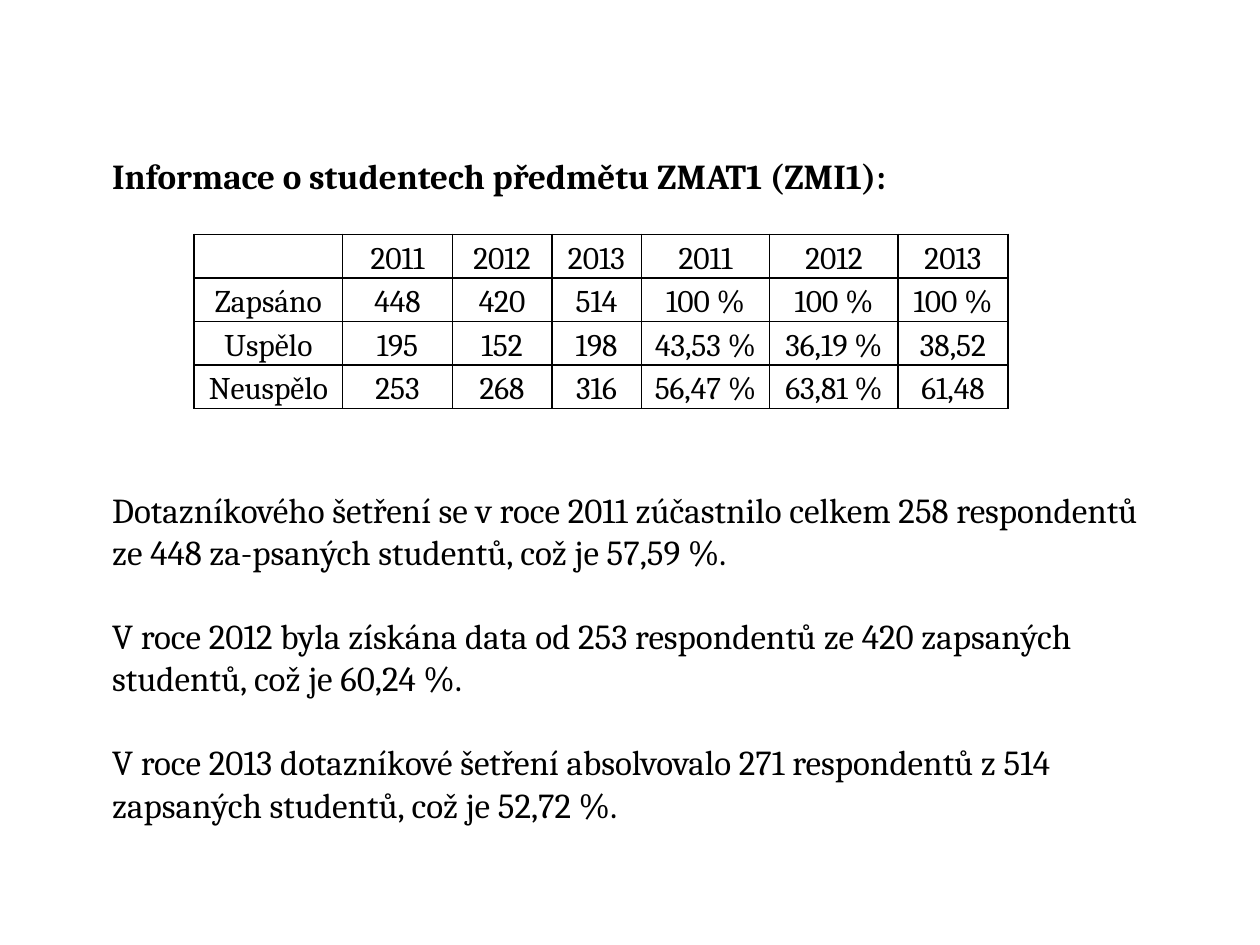
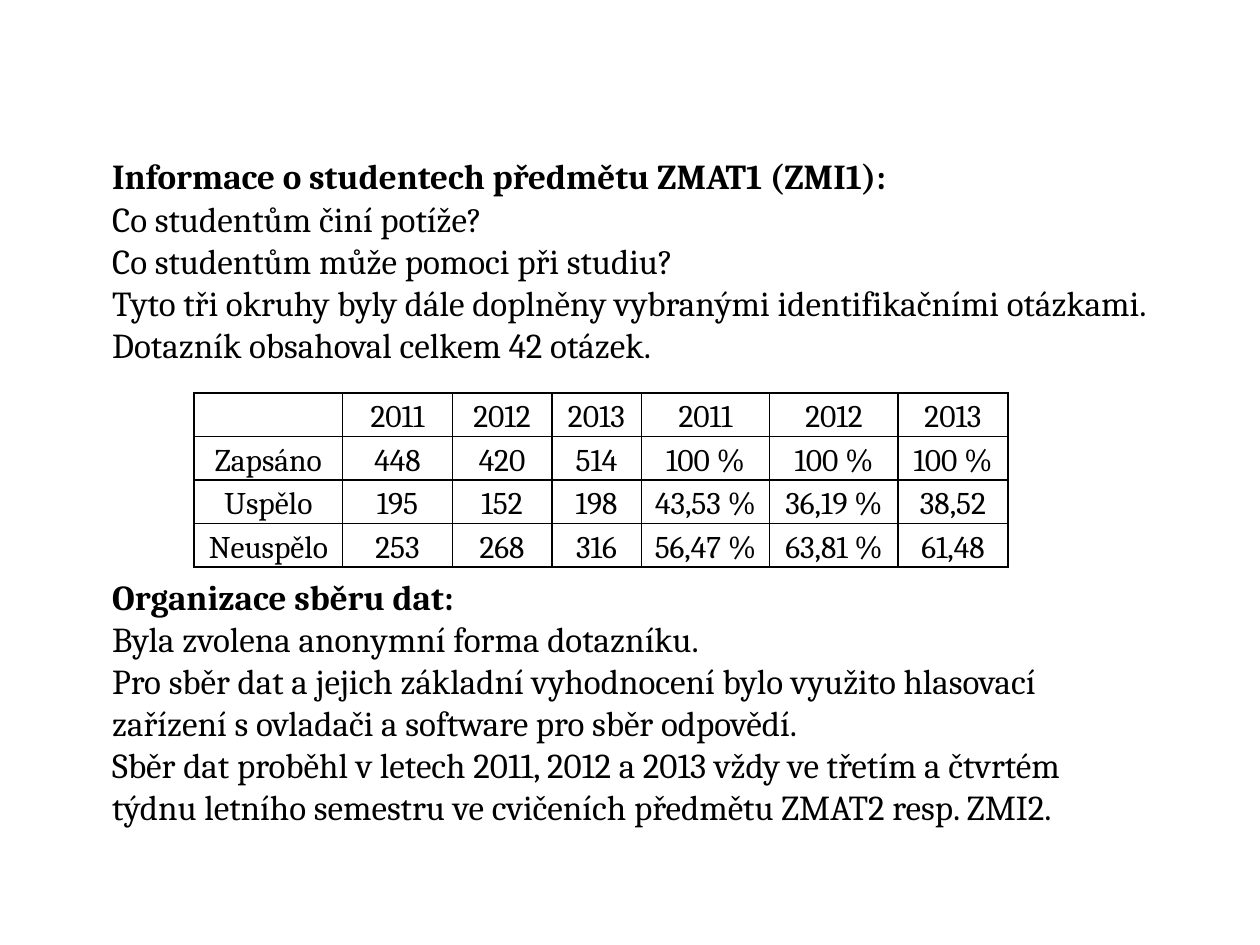
from lxml import etree
from pptx import Presentation
from pptx.dml.color import RGBColor
from pptx.enum.text import MSO_ANCHOR, MSO_AUTO_SIZE, PP_ALIGN
from pptx.oxml.ns import qn
from pptx.util import Inches, Pt

TOP, MIDDLE = MSO_ANCHOR.TOP, MSO_ANCHOR.MIDDLE
LEFT, CENTER = PP_ALIGN.LEFT, PP_ALIGN.CENTER
GROW = MSO_AUTO_SIZE.SHAPE_TO_FIT_TEXT

BLACK = RGBColor(0, 0, 0)
FONT = "Cambria"
TEXT_SIZE, TABLE_SIZE = 20, 18
BLANK_LINE = 24  # points, one line of text

MARGIN = 0.79
TOP_TEXT_Y, TOP_TEXT_WIDTH = 1.18, 8.7
LOWER_TEXT_WIDTH = 8.35
TABLE_LEFT, TABLE_HEIGHT = 1.54, 1.38
COLUMN_WIDTHS = [1.18, 0.87, 0.79, 0.71, 1.02, 1.02, 0.87]

HEADING = "Informace o studentech předmětu ZMAT1 (ZMI1):"
RESULTS = [
    ["", "2011", "2012", "2013", "2011", "2012", "2013"],
    ["Zapsáno", "448", "420", "514", "100 %", "100 %", "100 %"],
    ["Uspělo", "195", "152", "198", "43,53 %", "36,19 %", "38,52"],
    ["Neuspělo", "253", "268", "316", "56,47 %", "63,81 %", "61,48"],
]

SLIDES = [
    {
        "heading": HEADING,
        "questions": [],
        "top_height": 0.44,
        "table_y": 1.86,
        "lower_heading": None,
        "lower_lines": [
            "Dotazníkového šetření se v roce 2011 zúčastnilo celkem 258 respondentů "
            "ze 448 za-psaných studentů, což je 57,59 %.",
            "V roce 2012 byla získána data od 253 respondentů ze 420 zapsaných "
            "studentů, což je 60,24 %.",
            "V roce 2013 dotazníkové šetření absolvovalo 271 respondentů z 514 "
            "zapsaných studentů, což je 52,72 %.",
        ],
        "lower_y": 3.83,
        "lower_height": 2.79,
        "gap": BLANK_LINE,
    },
    {
        "heading": HEADING,
        "questions": [
            "Co studentům činí potíže?",
            "Co studentům může pomoci při studiu?",
            "Tyto tři okruhy byly dále doplněny vybranými identifikačními otázkami.",
            "Dotazník obsahoval celkem 42 otázek.",
        ],
        "top_height": 1.78,
        "table_y": 3.12,
        "lower_heading": "Organizace sběru dat:",
        "lower_lines": [
            "Byla zvolena anonymní forma dotazníku.",
            "Pro sběr dat a jejich základní vyhodnocení bylo využito hlasovací "
            "zařízení s ovladači a software pro sběr odpovědí.",
            "Sběr dat proběhl v letech 2011, 2012 a 2013 vždy ve třetím a čtvrtém "
            "týdnu letního semestru ve cvičeních předmětu ZMAT2 resp. ZMI2.",
        ],
        "lower_y": 4.52,
        "lower_height": 2.46,
        "gap": 0,
    },
]


def style(font, size, bold=False):
    font.name, font.size, font.bold = FONT, Pt(size), bold
    font.color.rgb = BLACK


def fill_placeholder(placeholder, box, heading, lines, gap=0):
    """Place the text, with a bold heading first if there is one."""
    placeholder.left, placeholder.top, placeholder.width, placeholder.height = map(Inches, box)
    frame = placeholder.text_frame
    frame.word_wrap, frame.auto_size, frame.vertical_anchor = True, GROW, TOP
    entries = [(heading, True)] if heading else []
    entries += [(line, False) for line in lines]
    for i, (text, bold) in enumerate(entries):
        paragraph = frame.add_paragraph() if i else frame.paragraphs[0]
        paragraph.alignment, paragraph.line_spacing = LEFT, 1.0
        paragraph.space_before = Pt(gap if i else 0)
        properties = paragraph._p.get_or_add_pPr()
        properties.set("marL", "0")
        properties.set("indent", "0")
        etree.SubElement(properties, qn("a:buNone"))
        run = paragraph.add_run()
        run.text = text
        style(run.font, TEXT_SIZE, bold)


def add_borders(cell):
    properties = cell._tc.get_or_add_tcPr()
    for side in ("lnL", "lnR", "lnT", "lnB"):
        line = etree.SubElement(properties, qn(f"a:{side}"), w=str(Pt(1)))
        fill = etree.SubElement(line, qn("a:solidFill"))
        etree.SubElement(fill, qn("a:srgbClr"), val=str(BLACK))


def add_results(slide, y):
    table = slide.shapes.add_table(
        len(RESULTS), len(COLUMN_WIDTHS), Inches(TABLE_LEFT), Inches(y),
        Inches(sum(COLUMN_WIDTHS)), Inches(TABLE_HEIGHT)).table
    table.first_row = table.horz_banding = False
    for column, width in zip(table.columns, COLUMN_WIDTHS):
        column.width = Inches(width)
    for r, row in enumerate(RESULTS):
        for c, value in enumerate(row):
            cell = table.cell(r, c)
            cell.margin_left = cell.margin_right = Inches(0.05)
            cell.margin_top = cell.margin_bottom = 0
            cell.vertical_anchor = MIDDLE
            add_borders(cell)
            cell.fill.background()
            paragraph = cell.text_frame.paragraphs[0]
            paragraph.alignment, paragraph.line_spacing = CENTER, 1.15
            if value:
                run = paragraph.add_run()
                run.text = value
                style(run.font, TABLE_SIZE)


def main():
    prs = Presentation()
    prs.slide_width, prs.slide_height = Inches(10), Inches(7.5)
    for content in SLIDES:
        slide = prs.slides.add_slide(prs.slide_layouts[1])
        title, body = slide.placeholders
        fill_placeholder(
            title, (MARGIN, TOP_TEXT_Y, TOP_TEXT_WIDTH, content["top_height"]),
            content["heading"], content["questions"])
        fill_placeholder(
            body, (MARGIN, content["lower_y"], LOWER_TEXT_WIDTH, content["lower_height"]),
            content["lower_heading"], content["lower_lines"], content["gap"])
        add_results(slide, content["table_y"])
    prs.save("out.pptx")


if __name__ == "__main__":
    main()
